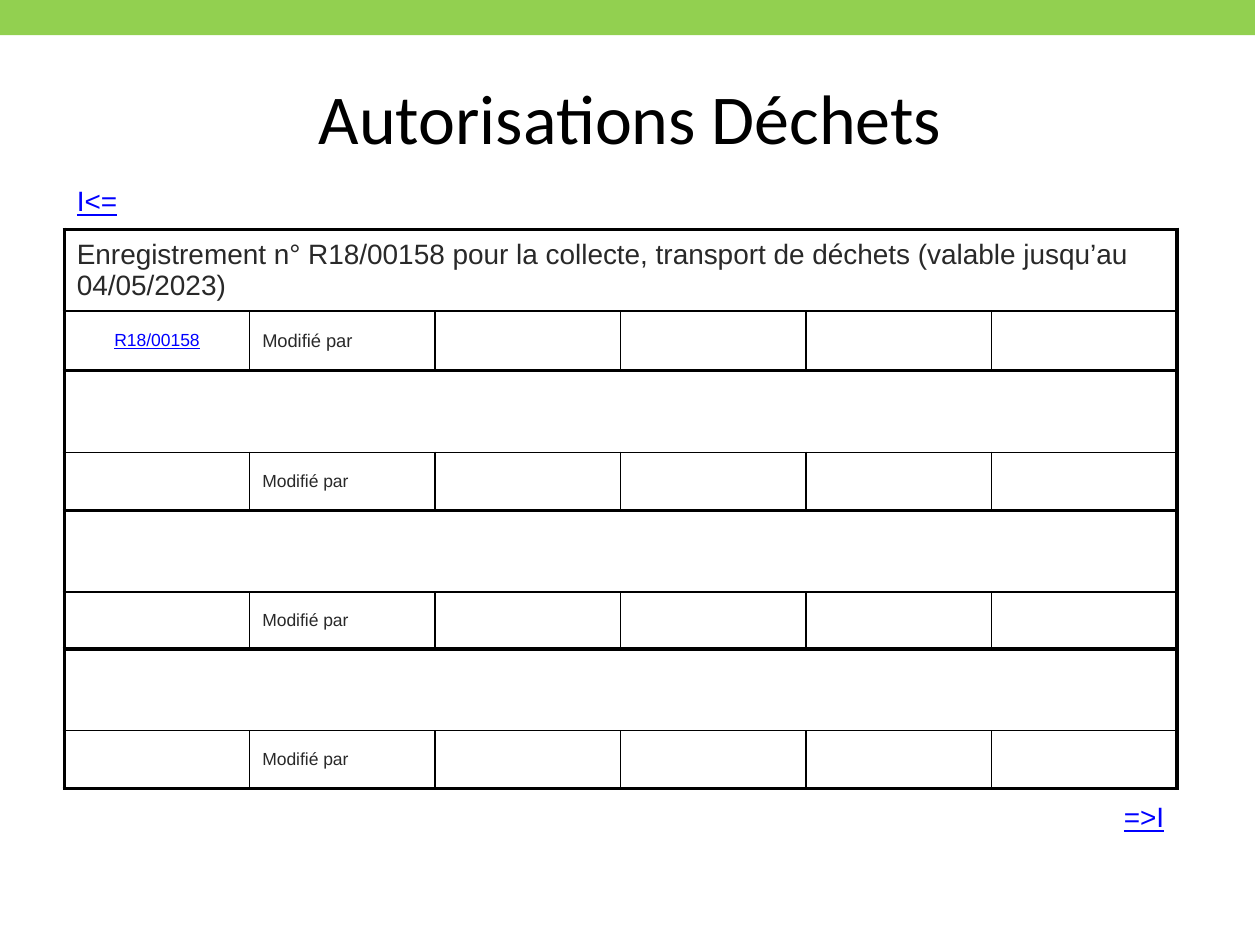
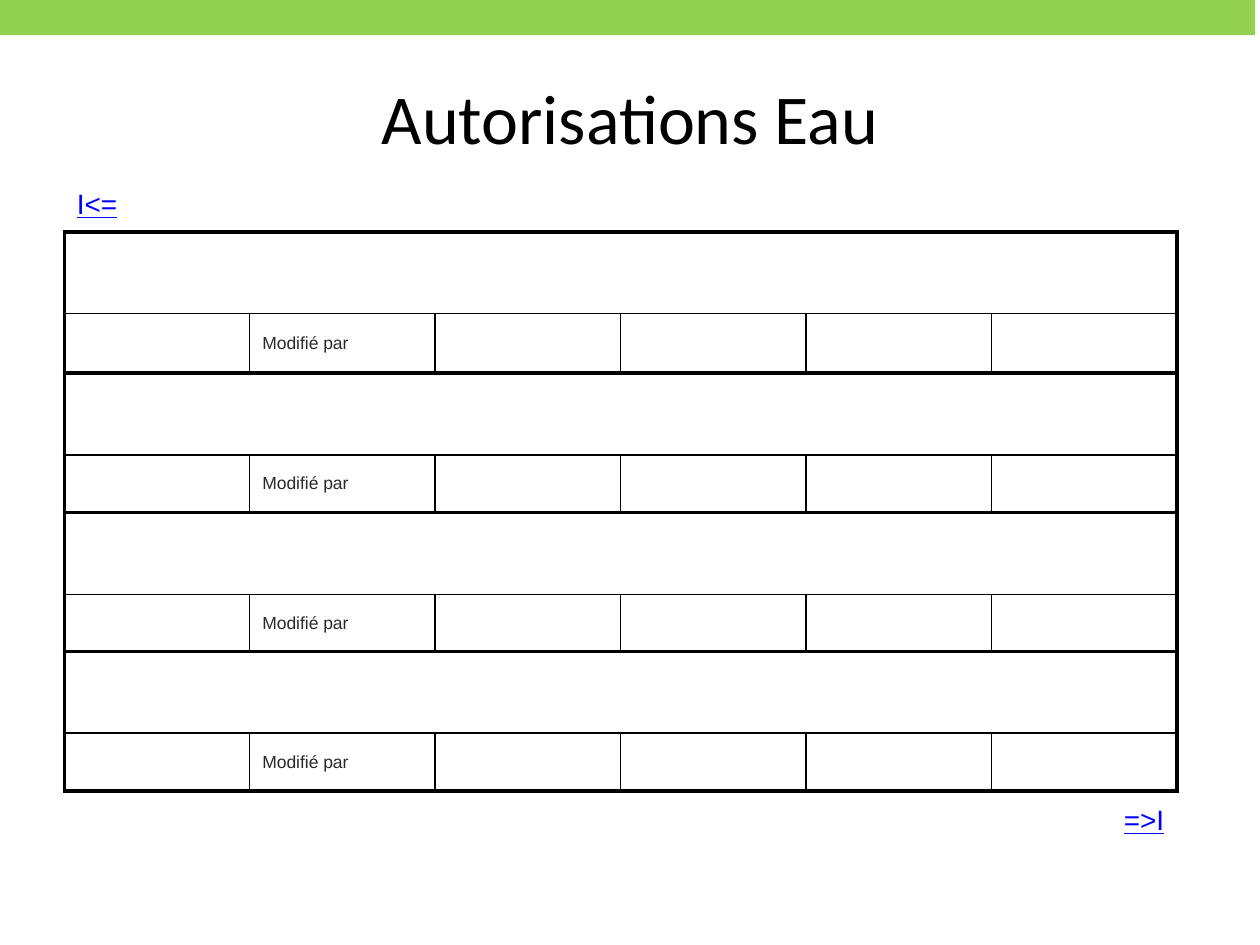
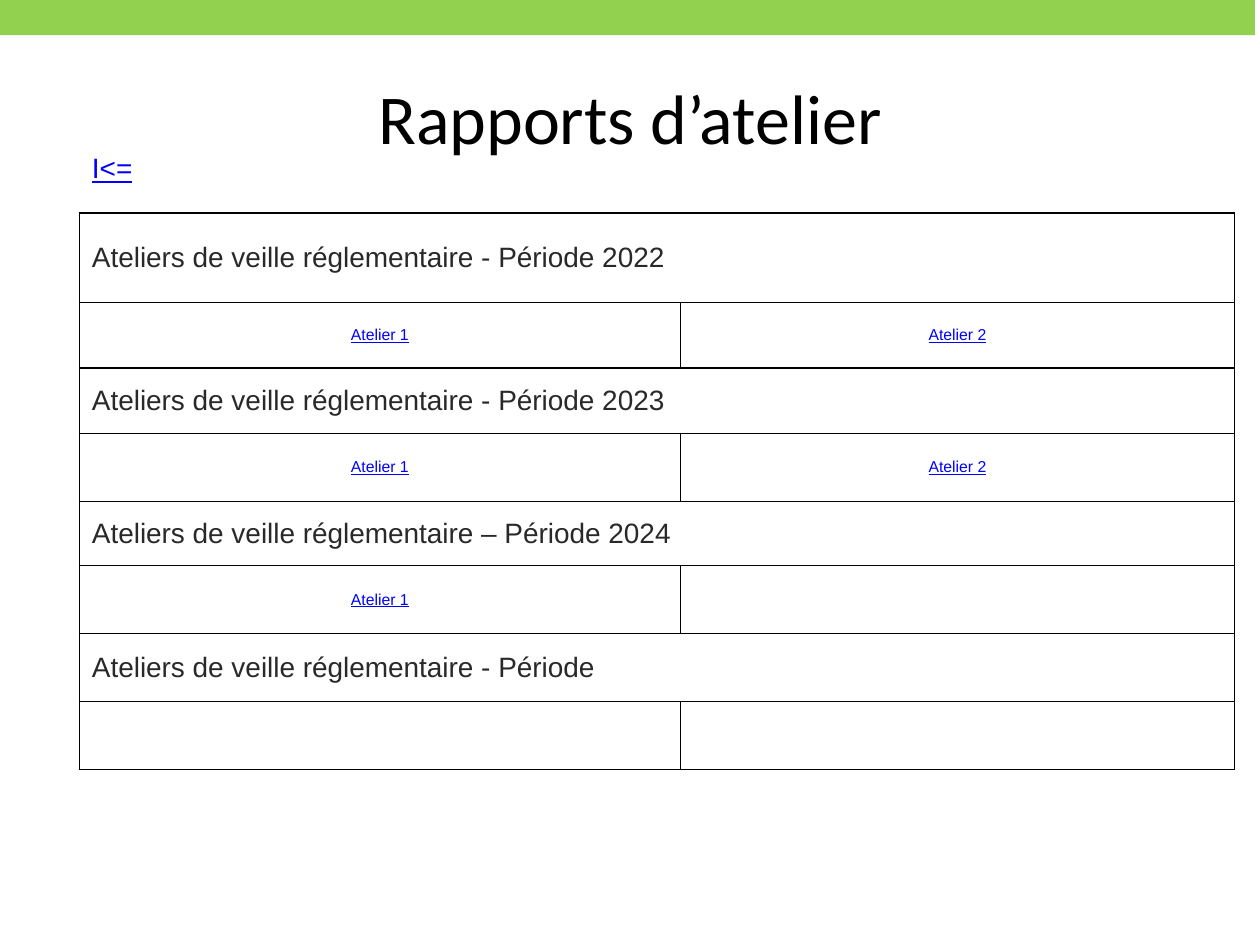
from dataclasses import dataclass

from lxml.etree import SubElement
from pptx import Presentation
from pptx.dml.color import RGBColor as Color
from pptx.enum.shapes import MSO_SHAPE as Preset
from pptx.enum.text import MSO_ANCHOR as Anchor, PP_ALIGN as Align
from pptx.oxml.ns import qn
from pptx.util import Inches, Pt


@dataclass(frozen=True)
class TextStyle:
    """Look of one kind of text."""
    size: float
    color: str
    align: Align = Align.LEFT
    underline: bool = False
    font: str = "Arial"


class Theme:
    """Colours, line weights and text styles of the presentation."""
    BAND = "92D050"
    BORDER = "000000"
    INK = "292929"
    LINK = "0000FF"
    THICK, THIN = 2.25, 1
    NO_GRID = "{2D5ABB26-0587-4C30-8999-92F81FD0307C}"
    TITLE = TextStyle(40, "000000", Align.CENTER, font="Calibri")
    HEADING = TextStyle(16, INK)
    BACK = TextStyle(16, LINK, underline=True)
    FORWARD = TextStyle(16, LINK, Align.RIGHT, True)
    RECORD = TextStyle(10, LINK, Align.CENTER, True)
    WORKSHOP = TextStyle(9, LINK, Align.CENTER, True)
    NOTE = TextStyle(10, INK)
    FIRST_NOTE = TextStyle(10.5, INK)


@dataclass(frozen=True)
class Entry:
    """Text of one cell and the number of columns it covers."""
    text: str = ""
    style: TextStyle = Theme.HEADING
    span: int = 1


@dataclass(frozen=True)
class Row:
    """Cells of one table row and the weights of its borders."""
    height: float
    entries: list
    top: float = 0
    bottom: float = 0
    outer: float = 0
    inner: float = 0


def write(frame, text, style):
    """Write one styled run in the first paragraph of a text frame."""
    paragraph = frame.paragraphs[0]
    paragraph.alignment = style.align
    run = paragraph.add_run()
    run.text = text
    run.font.name = style.font
    run.font.size = Pt(style.size)
    run.font.underline = style.underline
    run.font.color.rgb = Color.from_string(style.color)


def add_frame(slide, title):
    """Add the top band and the title."""
    band = slide.shapes.add_shape(Preset.RECTANGLE, 0, 0, Inches(9.96), Inches(0.28))
    band.shadow.inherit = False
    band.fill.solid()
    band.fill.fore_color.rgb = Color.from_string(Theme.BAND)
    band.line.fill.background()
    box = slide.shapes.add_textbox(Inches(0.5), Inches(0.3), Inches(9), Inches(1.25))
    box.text_frame.word_wrap = True
    box.text_frame.vertical_anchor = Anchor.MIDDLE
    write(box.text_frame, title, Theme.TITLE)


def set_borders(cell, weights):
    """Draw the left, right, top and bottom borders that have a weight."""
    properties = cell._tc.get_or_add_tcPr()
    for side, weight in zip("LRTB", weights):
        line = SubElement(properties, qn(f"a:ln{side}"), w=str(Pt(weight)))
        if weight:
            fill = SubElement(line, qn("a:solidFill"))
            SubElement(fill, qn("a:srgbClr"), val=Theme.BORDER)
        else:
            SubElement(line, qn("a:noFill"))


def fill_row(table, index, row):
    """Merge, border and fill the cells of one row."""
    last_column = len(table.columns) - 1
    first = 0
    for entry in row.entries:
        last = first + entry.span - 1
        left = row.inner if first else row.outer
        right = row.outer if last == last_column else row.inner
        for column in range(first, last + 1):
            cell = table.cell(index, column)
            set_borders(cell, (left if column == first else 0,
                               right if column in (first, last) else 0,
                               row.top, row.bottom))
            cell.fill.background()
        cell = table.cell(index, first)
        if entry.span > 1:
            cell.merge(table.cell(index, last))
        cell.vertical_anchor = Anchor.MIDDLE
        if entry.text:
            write(cell.text_frame, entry.text, entry.style)
        first = last + 1


def add_grid(slide, left, top, widths, rows):
    """Add a plain table with the given column widths and rows."""
    shape = slide.shapes.add_table(
        len(rows), len(widths), Inches(left), Inches(top),
        Inches(sum(widths)), Inches(sum(row.height for row in rows)))
    table = shape.table
    table.first_row = table.horz_banding = False
    table._tbl.tblPr.find(qn("a:tableStyleId")).text = Theme.NO_GRID
    for column, width in zip(table.columns, widths):
        column.width = Inches(width)
    for index, row in enumerate(rows):
        table.rows[index].height = Inches(row.height)
        fill_row(table, index, row)


def add_permits(slide, title, top, permits):
    """Build a permit slide from (heading, record, note style) entries."""
    add_frame(slide, title)
    thick, thin = Theme.THICK, Theme.THIN
    blank = Entry()
    rows = [Row(0.43, [Entry("I<=", Theme.BACK)] + [blank] * 5, bottom=thick)]
    for (heading, record, note), height in zip(permits, (0.47, 0.46, 0.45, 0.46)):
        details = [Entry(record, Theme.RECORD), Entry("Modifié par", note)]
        rows += [Row(0.65, [Entry(heading, span=6)], thick, thin, thick),
                 Row(height, details + [blank] * 4, thin, thick, thick, thin)]
    rows.append(Row(0.47, [blank] * 5 + [Entry("=>I", Theme.FORWARD)], top=thick))
    add_grid(slide, 0.51, top, [8.83 / 6] * 6, rows)


def add_workshops(slide, title, periods):
    """Build the workshop slide from (heading, workshops, heights) entries."""
    add_frame(slide, title)
    thin = Theme.THIN
    pairs = [Entry(span=2)] * 4
    rows = [Row(0.7, [Entry("I<=", Theme.BACK), *pairs, Entry()], bottom=thin)]
    for heading, workshops, heights in periods:
        links = [Entry(text, Theme.WORKSHOP, span)
                 for text, span in zip(workshops, (6, 4))]
        rows += [Row(height, entries, thin, thin, thin, thin)
                 for height, entries in zip(heights, ([Entry(heading, span=10)], links))]
    closing = [Entry(span=span) for span in (1, 1, 2, 4, 1, 1)]
    rows.append(Row(0.77, closing, top=thin))
    widths = [1.35, 0.55, 0.79, 1.63, 0.13, 0.32, 1.89, 0.55, 0.8, 1.16]
    add_grid(slide, 0.63, 0.99, widths, rows)


def main():
    """Build and save the presentation."""
    presentation = Presentation()
    presentation.slide_width, presentation.slide_height = Inches(10), Inches(7.5)
    blank_layout = presentation.slide_layouts[6]
    waste, water, reports = [presentation.slides.add_slide(blank_layout)
                             for _ in range(3)]
    empty_permit = ("", "", Theme.NOTE)
    collection = ("Enregistrement n° R18/00158 pour la collecte, transport de "
                  "déchets (valable jusqu’au 04/05/2023)",
                  "R18/00158", Theme.FIRST_NOTE)
    add_permits(waste, "Autorisations Déchets", 1.39, [collection] + [empty_permit] * 3)
    add_permits(water, "Autorisations Eau", 1.41, [empty_permit] * 4)
    subject = "Ateliers de veille réglementaire"
    add_workshops(reports, "Rapports d’atelier", [
        (f"{subject} - Période 2022", ("Atelier 1", "Atelier 2"), (0.71, 0.52)),
        (f"{subject} - Période 2023", ("Atelier 1", "Atelier 2"), (0.52, 0.54)),
        (f"{subject} – Période 2024", ("Atelier 1", ""), (0.51, 0.54)),
        (f"{subject} - Période", ("", ""), (0.54, 0.54)),
    ])
    presentation.save("out.pptx")


if __name__ == "__main__":
    main()
